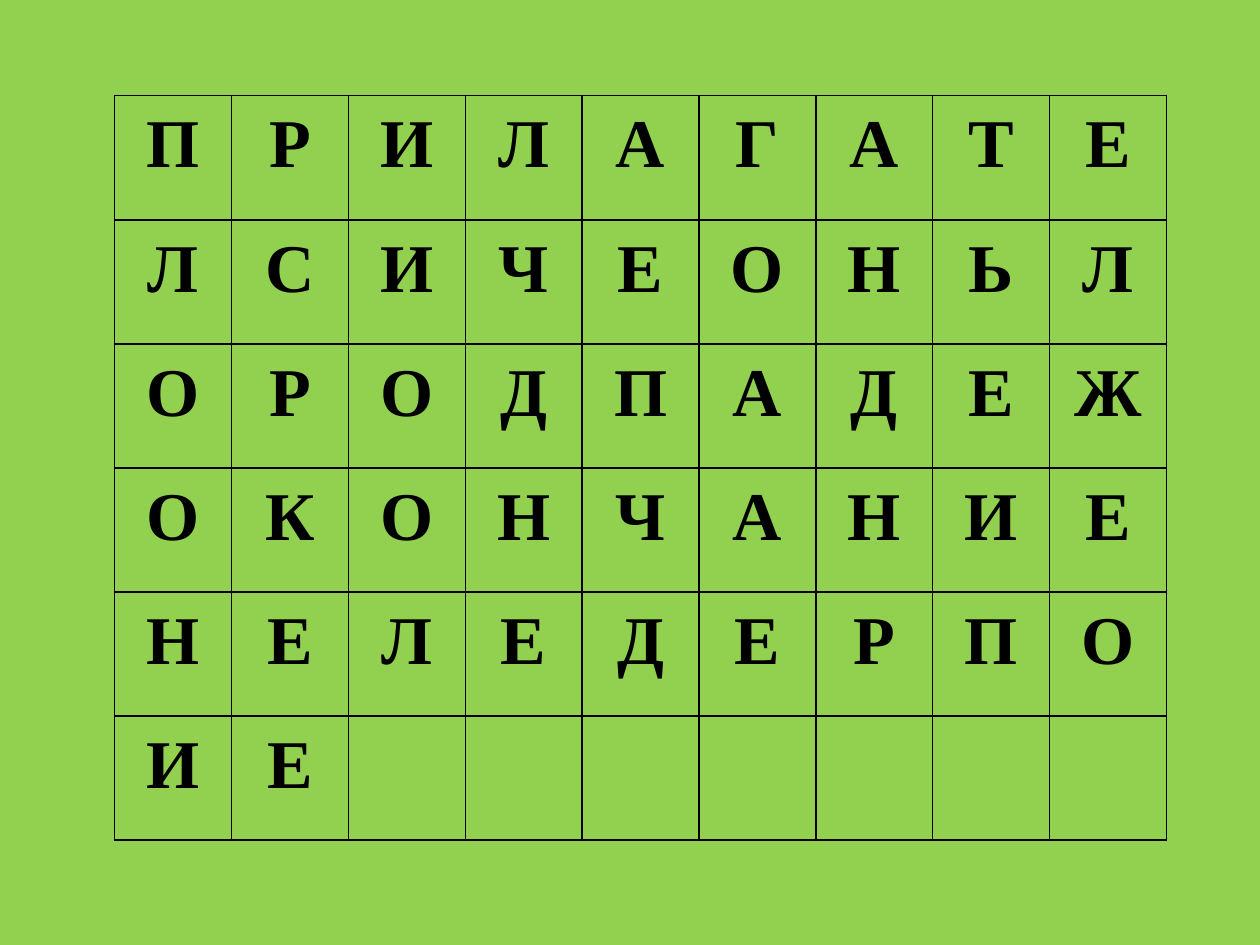
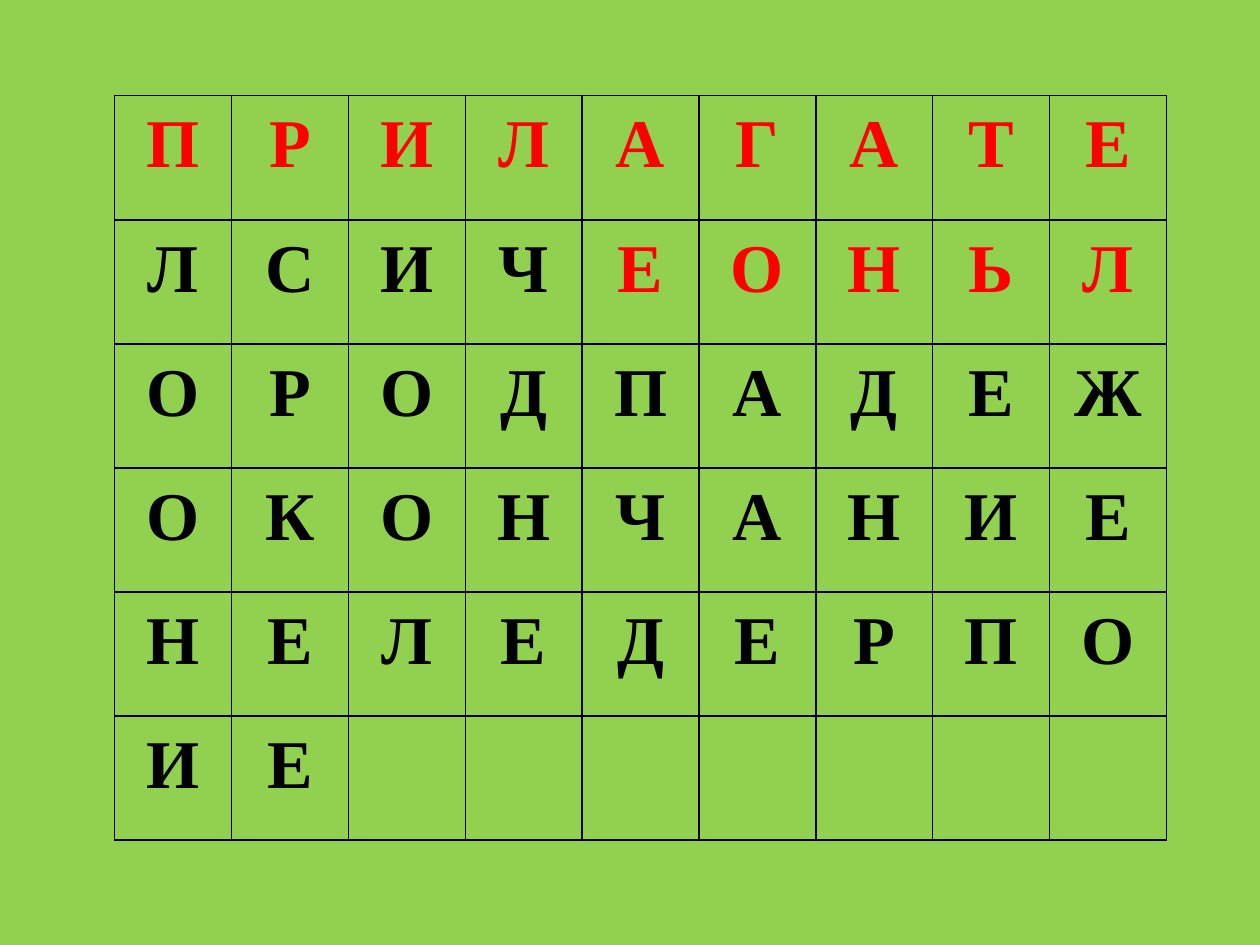
from lxml import etree
from pptx import Presentation
from pptx.dml.color import RGBColor
from pptx.enum import text
from pptx.oxml import ns
from pptx.util import Inches, Pt

LETTER_ROWS = [
    "ПРИЛАГАТЕ",
    "ЛСИЧЕОНЬЛ",
    "ОРОДПАДЕЖ",
    "ОКОНЧАНИЕ",
    "НЕЛЕДЕРПО",
    "ИЕ",
]
# The word found on each slide: row -> columns of its letters
FOUND_WORDS = [
    {},
    {0: range(9), 1: range(4, 9)},
]

GREEN = RGBColor(0x92, 0xD0, 0x50)
BLACK = RGBColor(0, 0, 0)
RED = RGBColor(0xFF, 0, 0)
FONT = "Times New Roman"
LETTER_SIZE = Pt(39)
BORDER_WIDTH = Pt(1)

GRID_LEFT, GRID_TOP = Inches(0.91), Inches(0.76)
GRID_WIDTH, GRID_HEIGHT = Inches(8.35), Inches(5.91)
COLUMN_COUNT = len(LETTER_ROWS[0])


def add_borders(cell):
    properties = cell._tc.get_or_add_tcPr()
    for side in ("a:lnL", "a:lnR", "a:lnT", "a:lnB"):
        border = etree.SubElement(properties, ns.qn(side), w=str(BORDER_WIDTH))
        fill = etree.SubElement(border, ns.qn("a:solidFill"))
        etree.SubElement(fill, ns.qn("a:srgbClr"), val=str(BLACK))


def write_letter(cell, letter, color):
    cell.margin_left = cell.margin_right = Inches(0.04)
    cell.margin_top = cell.margin_bottom = 0
    paragraph = cell.text_frame.paragraphs[0]
    paragraph.alignment = text.PP_ALIGN.CENTER
    paragraph.line_spacing = 1.15
    run = paragraph.add_run()
    run.text = letter
    run.font.name = FONT
    run.font.size = LETTER_SIZE
    run.font.bold = True
    run.font.color.rgb = color


def add_letter_grid(slide, found):
    grid = slide.shapes.add_table(
        len(LETTER_ROWS), COLUMN_COUNT,
        GRID_LEFT, GRID_TOP, GRID_WIDTH, GRID_HEIGHT,
    ).table
    grid.first_row = grid.horz_banding = False
    for row, letters in enumerate(LETTER_ROWS):
        for column in range(COLUMN_COUNT):
            cell = grid.cell(row, column)
            add_borders(cell)
            cell.fill.background()
            if column < len(letters):
                color = RED if column in found.get(row, ()) else BLACK
                write_letter(cell, letters[column], color)


def main():
    deck = Presentation()
    deck.slide_width, deck.slide_height = Inches(10), Inches(7.5)
    for found in FOUND_WORDS:
        slide = deck.slides.add_slide(deck.slide_layouts[6])
        slide.background.fill.solid()
        slide.background.fill.fore_color.rgb = GREEN
        add_letter_grid(slide, found)
    deck.save("out.pptx")


if __name__ == "__main__":
    main()
